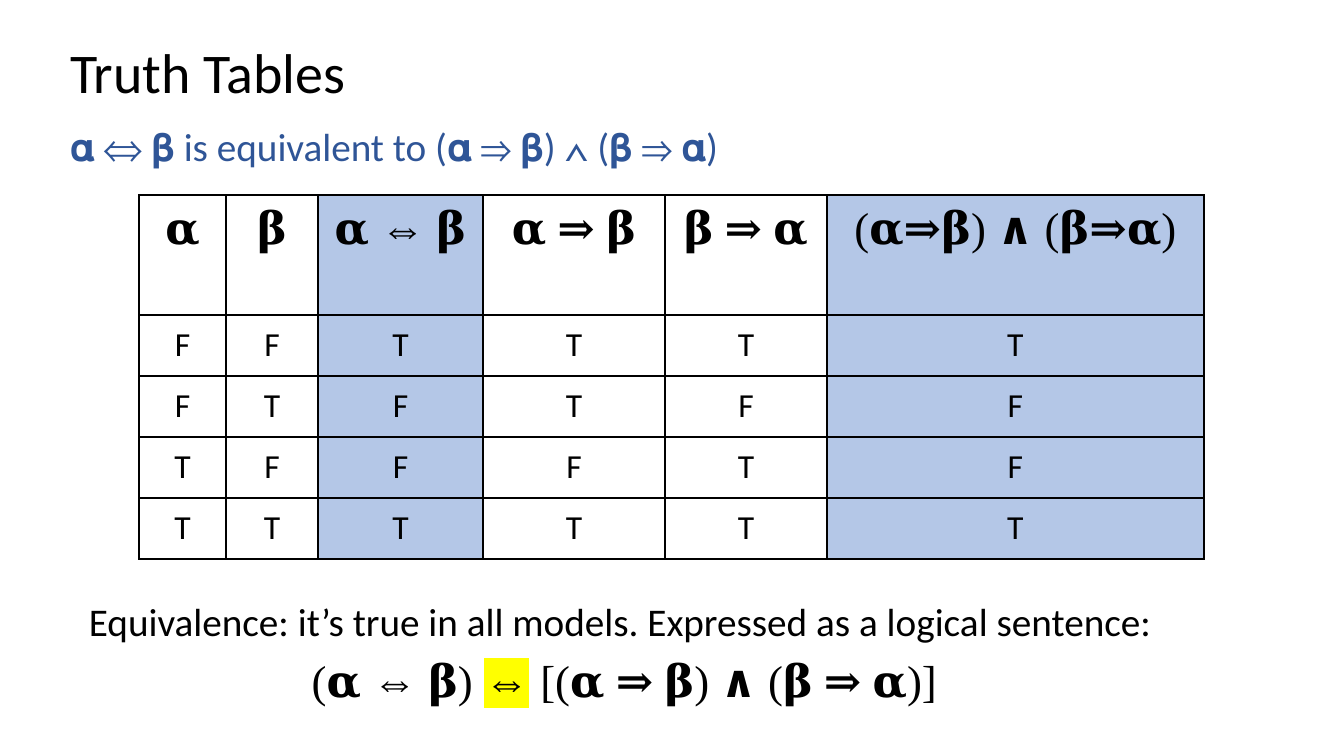
from lxml import etree
from pptx import Presentation
from pptx import util as u
from pptx.dml.color import RGBColor
from pptx.enum import text
from pptx.oxml import ns

PX = 914400 / 100.8
BLACK, BLUE, PALE_BLUE, YELLOW = "000000", "2F5597", "B4C7E7", "FFFF00"
SANS, SERIF = "Calibri", "Times New Roman"


def px(length):
    """Turn px into EMU."""
    return u.Emu(round(length * PX))


def rgb(value):
    """Turn a hex string into a colour."""
    return RGBColor.from_string(value)


def add_solid_colour(parent, tag, value):
    """Append an element that holds one RGB colour."""
    element = etree.SubElement(parent, ns.qn(tag))
    etree.SubElement(element, ns.qn("a:srgbClr"), val=value)


class LogicSlide:
    """Holds the text style and the slide being built."""

    def __init__(self, presentation):
        """Add a title-only slide."""
        self.slide = presentation.slides.add_slide(presentation.slide_layouts[5])

    def style(self, paragraph, size, font=SANS, colour=BLACK, align=text.PP_ALIGN.LEFT, before=0):
        """Format a whole paragraph."""
        paragraph.alignment = align
        paragraph.space_before = u.Pt(before)
        paragraph.font.size = u.Pt(size)
        paragraph.font.name = font
        paragraph.font.color.rgb = rgb(colour)

    def title(self, words, left, top, width, height):
        """Place and fill the title placeholder."""
        shape = self.slide.shapes.title
        shape.left, shape.top, shape.width, shape.height = map(px, (left, top, width, height))
        shape.text_frame.vertical_anchor = text.MSO_ANCHOR.MIDDLE
        paragraph = shape.text_frame.paragraphs[0]
        paragraph.text = words
        paragraph.line_spacing = 0.9
        self.style(paragraph, 40)

    def text_box(self, left, top, width, height, inset=5):
        """Add a wrapping text box and return its frame."""
        frame = self.slide.shapes.add_textbox(*map(px, (left, top, width, height))).text_frame
        frame.word_wrap = True
        frame.margin_top = frame.margin_bottom = px(inset)
        return frame

    def highlight(self, run, colour):
        """Put a marker colour behind a run."""
        add_solid_colour(run.font._element, "a:highlight", colour)

    def borders(self, cell):
        """Draw a thin black line on each side of a cell."""
        properties = cell._tc.get_or_add_tcPr()
        for position, side in enumerate(("a:lnL", "a:lnR", "a:lnT", "a:lnB")):
            line = etree.Element(ns.qn(side), w=str(u.Pt(1)))
            add_solid_colour(line, "a:solidFill", BLACK)
            properties.insert(position, line)

    def truth_table(self, left, top, widths, heights, rows, shaded):
        """Add a table with a formula header and shaded columns."""
        size = (sum(widths), sum(heights))
        table = self.slide.shapes.add_table(
            len(rows), len(widths), *map(px, (left, top, *size))).table
        for column, width in zip(table.columns, widths):
            column.width = px(width)
        for row_index, (row, height) in enumerate(zip(rows, heights)):
            table.rows[row_index].height = px(height)
            for column_index, words in enumerate(row):
                cell = table.cell(row_index, column_index)
                cell.margin_left = cell.margin_right = cell.margin_top = cell.margin_bottom = px(10)
                if column_index in shaded:
                    cell.fill.solid()
                    cell.fill.fore_color.rgb = rgb(PALE_BLUE)
                else:
                    cell.fill.background()
                self.borders(cell)
                paragraph = cell.text_frame.paragraphs[0]
                paragraph.text = words
                if row_index == 0:
                    self.style(paragraph, 32, SERIF, align=text.PP_ALIGN.CENTER, before=6.4)
                else:
                    self.style(paragraph, 24, align=text.PP_ALIGN.CENTER)
                paragraph.font.bold = False


def main():
    """Build the truth table slide."""
    presentation = Presentation()
    presentation.slide_width, presentation.slide_height = px(1344), px(756)
    page = LogicSlide(presentation)
    page.title("Truth Tables", 60, 40, 1159, 70)

    claim = page.text_box(60, 123, 1159, 60).paragraphs[0]
    claim.text = "𝛂 ⇔ 𝛃 is equivalent to (𝛂 ⇒ 𝛃) ∧ (𝛃 ⇒ 𝛂)"
    claim.line_spacing = 0.9
    page.style(claim, 28, colour=BLUE, before=10)

    header = ["𝛂", "𝛃", "𝛂 ⇔ 𝛃", "𝛂 ⇒ 𝛃", "𝛃 ⇒ 𝛂", "(𝛂⇒𝛃) ∧ (𝛃⇒𝛂)"]
    models = ["FFTTTT", "FTFTFF", "TFFFTF", "TTTTTT"]
    page.truth_table(139, 195, [87, 92, 165, 182, 162, 377], [120] + [61] * 4,
                     [header, *models], shaded=(2, 5))

    frame = page.text_box(79, 587, 1091, 160, inset=10)
    caption = frame.paragraphs[0]
    caption.text = "Equivalence: it’s true in all models. Expressed as a logical sentence:"
    page.style(caption, 28)
    sentence = frame.add_paragraph()
    page.style(sentence, 32, SERIF, align=text.PP_ALIGN.CENTER, before=6.4)
    for words in ("(𝛂 ⇔ 𝛃) ", "⇔", " [(𝛂 ⇒ 𝛃) ∧ (𝛃 ⇒ 𝛂)]"):
        run = sentence.add_run()
        run.text = words
        if words == "⇔":
            page.highlight(run, YELLOW)
    presentation.save("out.pptx")


if __name__ == "__main__":
    main()
